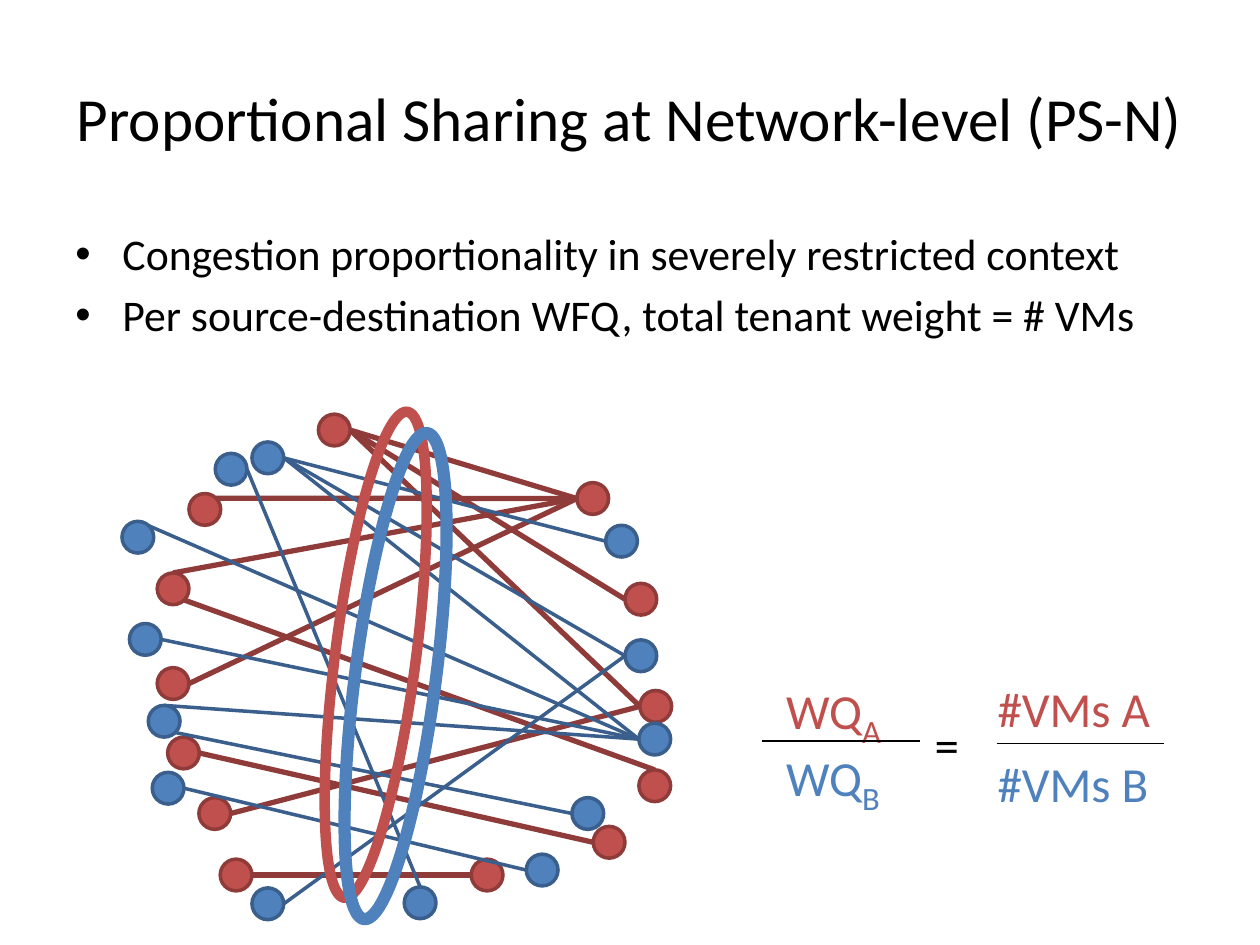
from lxml import etree
from pptx import Presentation
from pptx.dml.color import RGBColor
from pptx.enum.shapes import MSO_CONNECTOR, MSO_SHAPE
from pptx.enum.text import MSO_ANCHOR, PP_ALIGN
from pptx.oxml.ns import qn
from pptx.util import Cm, Pt

STRAIGHT = MSO_CONNECTOR.STRAIGHT
OVAL = MSO_SHAPE.OVAL
TOP, MIDDLE = MSO_ANCHOR.TOP, MSO_ANCHOR.MIDDLE
LEFT, CENTER = PP_ALIGN.LEFT, PP_ALIGN.CENTER

BLACK, RED, BLUE = "000000", "C0504D", "4F81BD"
DARK_RED, DARK_BLUE = "8E3B39", "3A5F8C"
rgb = RGBColor.from_string

deck = Presentation()
deck.slide_width, deck.slide_height = Cm(25.4), Cm(19.05)
page = deck.slides.add_slide(deck.slide_layouts[6])


def add_text(text, left, top, width, height, size=28, color=BLACK, align=LEFT,
             anchor=TOP, wrap=False, bullet=False, subscript=""):
    """Add a text box with one paragraph per line of text; lengths in cm."""
    box = page.shapes.add_textbox(Cm(left), Cm(top), Cm(width), Cm(height))
    frame = box.text_frame
    frame.word_wrap, frame.vertical_anchor = wrap, anchor
    frame.text = text
    if subscript:
        span = frame.paragraphs[0].add_run()
        span.text = subscript
        span.font.size = Pt(32)
        span._r.get_or_add_rPr().set("baseline", "-25000")
    for para in frame.paragraphs:
        para.alignment = align
        for span in para.runs:
            span.font.name = "Calibri"
            span.font.size = span.font.size or Pt(size)
            span.font.color.rgb = rgb(color)
        if bullet:
            para.space_after = Pt(5)
            properties = para._p.get_or_add_pPr()
            properties.set("marL", str(Cm(0.95)))
            properties.set("indent", str(Cm(-0.95)))
            etree.SubElement(properties, qn("a:buFont")).set("typeface", "Arial")
            etree.SubElement(properties, qn("a:buChar")).set("char", "•")


def add_line(x1, y1, x2, y2, color, weight):
    line = page.shapes.add_connector(STRAIGHT, Cm(x1), Cm(y1), Cm(x2), Cm(y2))
    line.line.color.rgb = rgb(color)
    line.line.width = Pt(weight)
    etree.SubElement(line._element.spPr, qn("a:effectLst"))


add_text("Proportional Sharing at Network-level (PS-N)", 1.27, 0.76, 22.86, 3.18,
         size=35, align=CENTER, anchor=MIDDLE, wrap=True)
add_text("Congestion proportionality in severely restricted context\n"
         "Per source-destination WFQ, total tenant weight = # VMs",
         1.27, 4.45, 23.29, 2.34, size=25, wrap=True, bullet=True)

# Network: dot centres in cm; a link is (source, side, destination, side)
DIAMETER = 0.64
SIDES = {"left": (-1, 0), "right": (1, 0), "top": (0, -1),
         "upper right": (0.71, -0.71), "lower right": (0.71, 0.71)}
tenants = [
    (RED, DARK_RED, 3,
     [(6.74, 8.67), (4.13, 10.27), (3.49, 11.87), (3.49, 13.78),
      (3.7, 15.18), (4.33, 16.4), (4.76, 17.64)],
     [(11.95, 10.05), (12.92, 12.08), (13.22, 14.24), (13.2, 15.84),
      (12.28, 16.98), (9.82, 17.64)],
     [(0, "right", 0, "left"), (0, "right", 1, "left"), (0, "right", 2, "left"),
      (1, "upper right", 0, "left"), (2, "top", 0, "left"),
      (2, "lower right", 3, "top"), (3, "right", 0, "left"),
      (4, "right", 4, "left"), (5, "right", 2, "left"), (6, "right", 5, "left")]),
    (BLUE, DARK_BLUE, 2,
     [(5.4, 9.23), (4.66, 9.46), (2.78, 10.83), (2.93, 12.89),
      (3.31, 14.54), (3.39, 15.89), (5.4, 18.22)],
     [(12.53, 10.91), (12.92, 13.22), (13.2, 14.9), (11.85, 16.4),
      (10.93, 17.54), (8.47, 18.2)],
     [(0, "right", 0, "left"), (0, "right", 1, "left"), (0, "right", 2, "left"),
      (1, "right", 5, "top"), (2, "upper right", 2, "left"),
      (3, "right", 2, "left"), (4, "top", 2, "left"),
      (4, "lower right", 3, "left"), (5, "right", 4, "left"),
      (6, "right", 1, "left")]),
]
for fill, outline, weight, sources, destinations, links in tenants:
    for source, source_side, destination, destination_side in links:
        ends = []
        for (x, y), side in ((sources[source], source_side),
                             (destinations[destination], destination_side)):
            dx, dy = SIDES[side]
            ends += [x + dx * DIAMETER / 2, y + dy * DIAMETER / 2]
        add_line(*ends, outline, weight)
    for x, y in sources + destinations:
        dot = page.shapes.add_shape(OVAL, Cm(x - DIAMETER / 2), Cm(y - DIAMETER / 2),
                                    Cm(DIAMETER), Cm(DIAMETER))
        dot.shadow.inherit = False
        dot.fill.solid()
        dot.fill.fore_color.rgb = rgb(fill)
        dot.line.color.rgb = rgb(outline)
        dot.line.width = Pt(2)

for left, top, color, weight in ((6.76, 8.26, RED, 6), (7.16, 8.69, BLUE, 7)):
    ring = page.shapes.add_shape(OVAL, Cm(left), Cm(top), Cm(1.63), Cm(9.88))
    ring.rotation = 7.4
    ring.shadow.inherit = False
    ring.fill.background()
    ring.line.color.rgb = rgb(color)
    ring.line.width = Pt(weight)

# Weight ratio
add_text("WQ", 15.6, 13.46, 2.72, 1.45, color=RED, subscript="A")
add_text("WQ", 15.6, 14.81, 2.46, 1.63, color=BLUE, subscript="B")
add_text("=", 18.59, 14.27, 1.17, 1.45)
add_text("#VMs A", 19.86, 13.56, 3.63, 1.45, color=RED)
add_text("#VMs B", 19.86, 15.06, 3.61, 1.45, color=BLUE)
add_line(15.37, 14.94, 18.54, 14.94, BLACK, 0.75)
add_line(20.09, 14.99, 23.47, 14.99, BLACK, 0.75)

deck.save("out.pptx")
